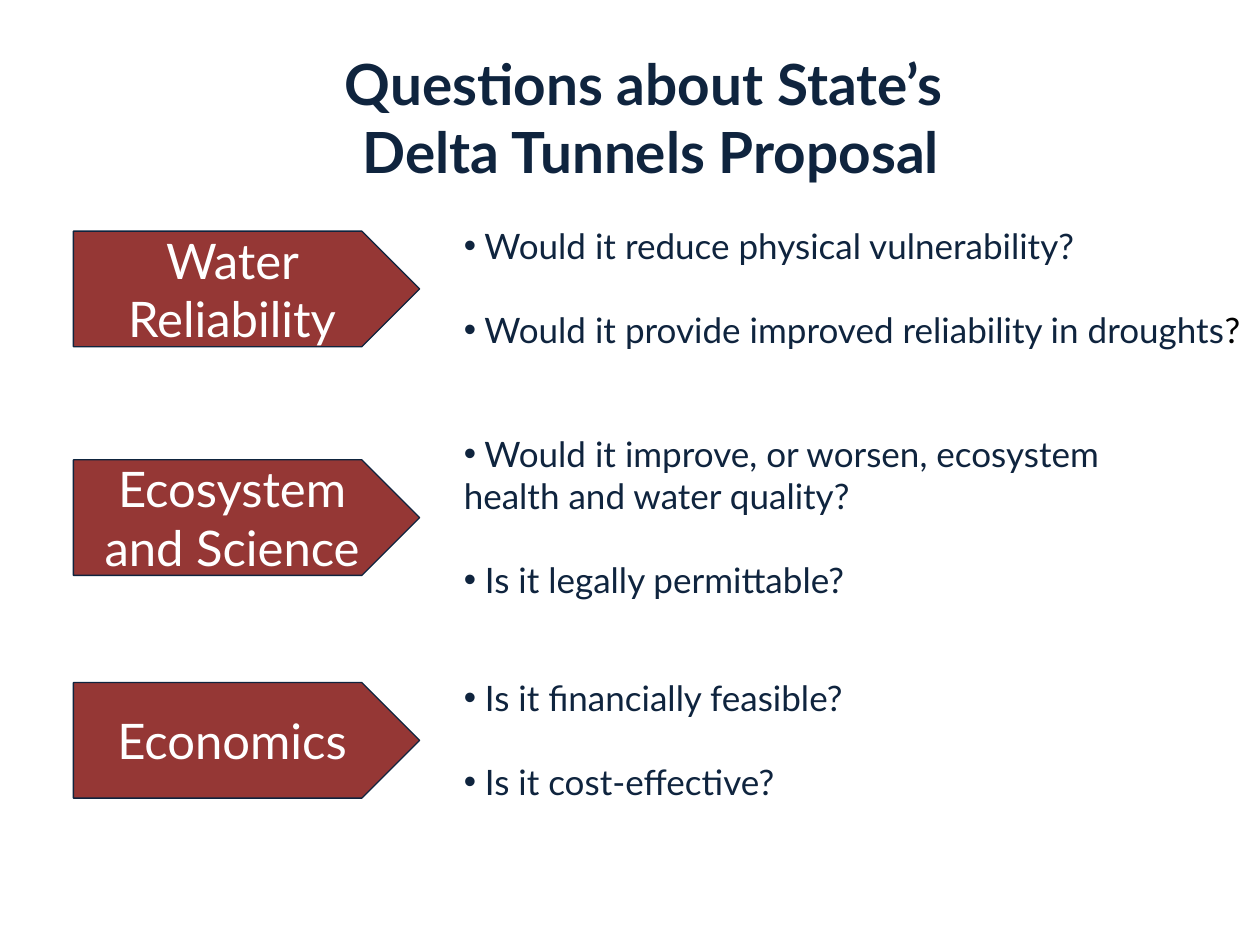
import dataclasses

import pptx
import pptx.dml.color
import pptx.enum.shapes
import pptx.enum.text
import pptx.oxml.ns
import pptx.util
from lxml import etree

Cm = pptx.util.Cm
RGB = pptx.dml.color.RGBColor
ALIGN = pptx.enum.text.PP_ALIGN
ANCHOR = pptx.enum.text.MSO_ANCHOR


@dataclasses.dataclass(frozen=True)
class Theme:
    font: str = "Lato"
    navy: RGB = RGB(0x0F, 0x24, 0x3E)
    red: RGB = RGB(0x95, 0x37, 0x35)
    white: RGB = RGB(0xFF, 0xFF, 0xFF)
    black: RGB = RGB(0, 0, 0)
    title_size: float = 32.4
    topic_size: float = 28
    question_size: float = 20
    question_gap: float = 24
    outline: float = 0.75


THEME = Theme()

# Topic, questions, top of the row and width of the questions in cm
TOPICS = [
    ("Water Reliability",
     ["Would it reduce physical vulnerability?",
      "Would it provide improved reliability in droughts?"], 4.66, 16.3),
    ("Ecosystem and Science",
     ["Would it improve, or worsen, ecosystem health and water quality?",
      "Is it legally permittable?"], 9.27, 14.81),
    ("Economics",
     ["Is it financially feasible?", "Is it cost-effective?"], 13.76, 11),
]
ROW_LEFT, ROW_HEIGHT = 1.48, 2.33
ARROW_WIDTH, QUESTIONS_OFFSET = 6.98, 7.62
LINE_HEIGHT, BOX_PADDING = 0.85, 0.28
CHARS_PER_LINE = 52


def add_bullet(paragraph):
    properties = paragraph._p.get_or_add_pPr()
    properties.set("marL", "0")
    properties.set("indent", "0")
    font = etree.SubElement(properties, pptx.oxml.ns.qn("a:buFont"))
    font.set("typeface", "Arial")
    bullet = etree.SubElement(properties, pptx.oxml.ns.qn("a:buChar"))
    bullet.set("char", "•")


def write(paragraph, text, *, size, color=THEME.navy, bold=False,
          align=ALIGN.LEFT, space_before=0):
    """Append text to the paragraph; a vertical tab breaks the line."""
    paragraph.alignment = align
    if space_before:
        paragraph.space_before = pptx.util.Pt(space_before)
    for index, line in enumerate(text.split("\v")):
        if index:
            paragraph.add_line_break()
        run = paragraph.add_run()
        run.text = line
        run.font.name = THEME.font
        run.font.size = pptx.util.Pt(size)
        run.font.bold = bold
        run.font.color.rgb = color


def add_title(slide, left, top, width, height):
    frame = slide.shapes.add_textbox(
        Cm(left), Cm(top), Cm(width), Cm(height)).text_frame
    frame.word_wrap = True
    frame.vertical_anchor = ANCHOR.MIDDLE
    write(frame.paragraphs[0], "Questions about State’s \vDelta Tunnels Proposal",
          size=THEME.title_size, bold=True, align=ALIGN.CENTER)


def add_topic_arrow(slide, topic, left, top, width, height):
    arrow = slide.shapes.add_shape(
        pptx.enum.shapes.MSO_SHAPE.PENTAGON,
        Cm(left), Cm(top), Cm(width), Cm(height))
    arrow.shadow.inherit = False
    arrow.fill.solid()
    arrow.fill.fore_color.rgb = THEME.red
    arrow.line.color.rgb = THEME.navy
    arrow.line.width = pptx.util.Pt(THEME.outline)
    frame = arrow.text_frame
    frame.word_wrap = True
    frame.vertical_anchor = ANCHOR.MIDDLE
    write(frame.paragraphs[0], topic, size=THEME.topic_size,
          color=THEME.white, align=ALIGN.CENTER)


def add_questions(slide, questions, left, middle, width):
    """Place bulleted questions in a box centred on the height of middle."""
    gaps = len(questions) - 1
    lines = sum(1 + len(question) // CHARS_PER_LINE for question in questions)
    height = BOX_PADDING + LINE_HEIGHT * (lines + gaps)
    frame = slide.shapes.add_textbox(
        Cm(left), Cm(middle - height / 2), Cm(width), Cm(height)).text_frame
    frame.word_wrap = True
    for index, question in enumerate(questions):
        paragraph = frame.add_paragraph() if index else frame.paragraphs[0]
        add_bullet(paragraph)
        stem, black_mark, _ = question.partition("?") if "droughts" in question \
            else (question, "", "")
        write(paragraph, " " + stem, size=THEME.question_size,
              space_before=THEME.question_gap if index else 0)
        if black_mark:
            paragraph_mark = paragraph.add_run()
            paragraph_mark.text = black_mark
            paragraph_mark.font.name = THEME.font
            paragraph_mark.font.size = pptx.util.Pt(THEME.question_size)
            paragraph_mark.font.color.rgb = THEME.black


def add_topic_row(slide, topic, questions, left, top, height, questions_width):
    add_topic_arrow(slide, topic, left, top, ARROW_WIDTH, height)
    add_questions(slide, questions, left + QUESTIONS_OFFSET,
                  top + height / 2, questions_width)


def main():
    deck = pptx.Presentation()
    deck.slide_width, deck.slide_height = Cm(25.4), Cm(19.05)
    slide = deck.slides.add_slide(deck.slide_layouts[6])
    add_title(slide, 1.27, 0.76, 23.7, 3.18)
    for topic, questions, top, questions_width in TOPICS:
        add_topic_row(slide, topic, questions, ROW_LEFT, top, ROW_HEIGHT,
                      questions_width)
    deck.save("out.pptx")


if __name__ == "__main__":
    main()
